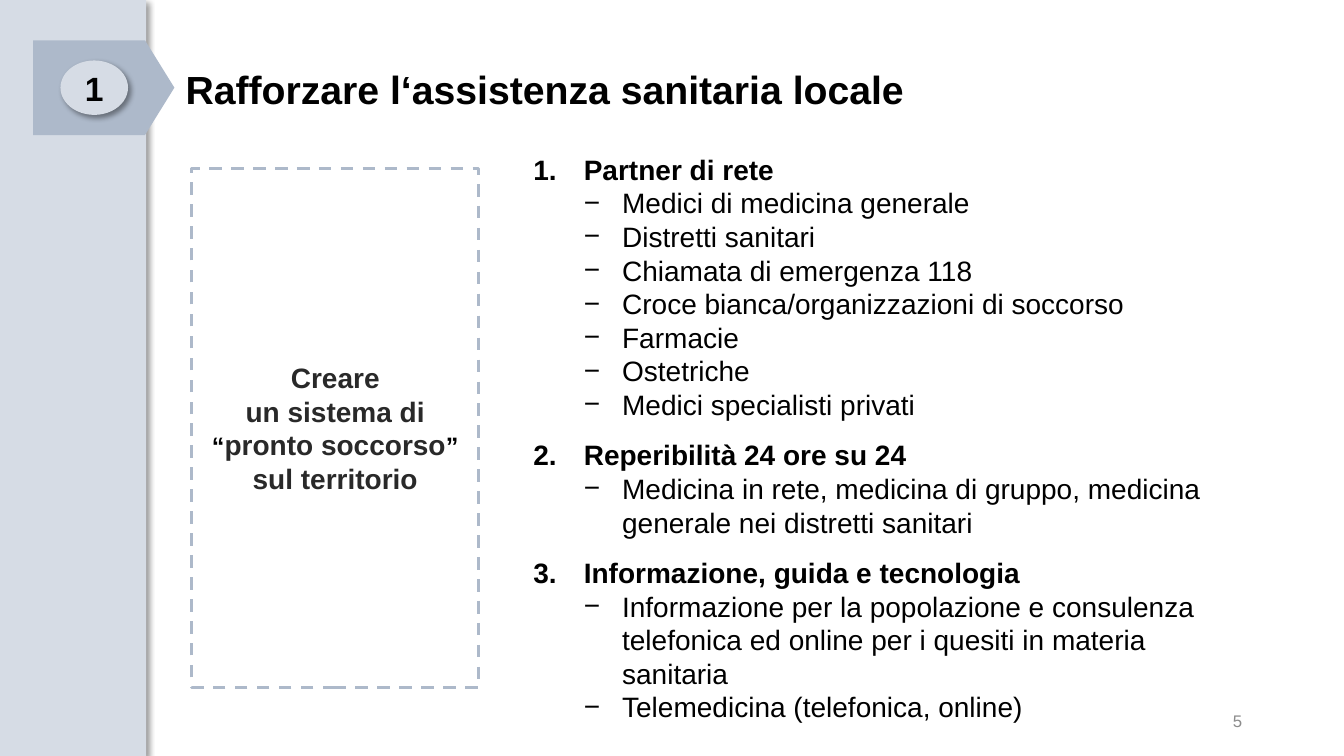
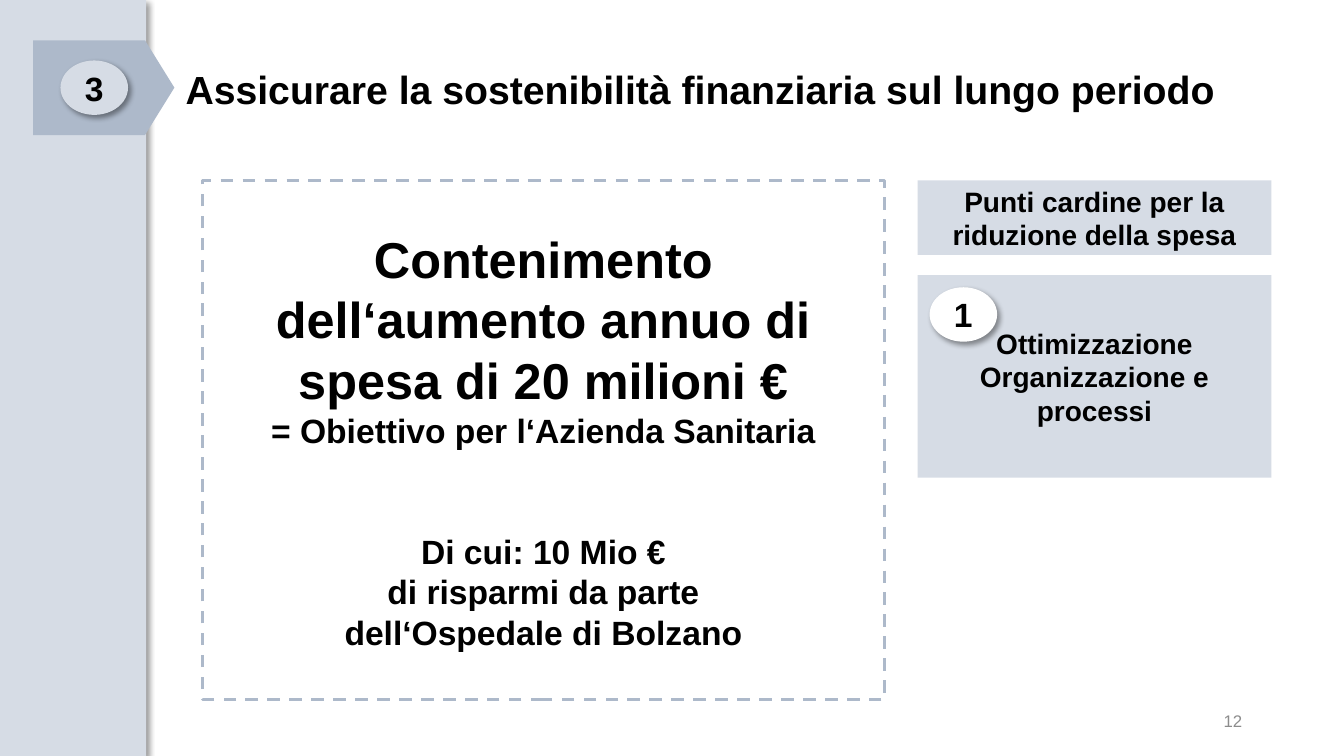
from dataclasses import dataclass

from lxml import etree
from pptx import Presentation
from pptx.dml.color import RGBColor
from pptx.enum.dml import MSO_LINE
from pptx.enum.shapes import MSO_SHAPE
from pptx.enum.text import MSO_ANCHOR, MSO_AUTO_SIZE, PP_ALIGN
from pptx.oxml import parse_xml
from pptx.oxml.ns import nsdecls, qn
from pptx.util import Pt

RECTANGLE = MSO_SHAPE.RECTANGLE
ELLIPSE = MSO_SHAPE.OVAL
PENTAGON = MSO_SHAPE.PENTAGON
LEFT, CENTER, RIGHT = PP_ALIGN.LEFT, PP_ALIGN.CENTER, PP_ALIGN.RIGHT
MIDDLE, TOP = MSO_ANCHOR.MIDDLE, MSO_ANCHOR.TOP
DASH = MSO_LINE.DASH
NO_FIT = MSO_AUTO_SIZE.NONE

EMU_PER_PX = 9144
SLIDE_WIDTH, SLIDE_HEIGHT = 1333, 750
TITLE_AND_BODY, TITLE_ONLY = 1, 5
LINE_RATIO = 1.2


@dataclass(frozen=True)
class Theme:
    font: str = "Arial"
    text: str = "000000"
    soft_text: str = "292929"
    muted: str = "8C8C8C"
    pale: str = "D6DCE5"
    steel: str = "ADB9CA"
    white: str = "FFFFFF"
    headline_size: int = 36
    title_size: int = 28
    large_size: int = 24
    body_size: int = 20
    quote_size: int = 18
    number_size: int = 12
    border: float = 2.25


def px(value):
    return value * EMU_PER_PX


class Deck:
    def __init__(self, theme):
        self.theme = theme
        self.presentation = Presentation()
        self.presentation.slide_width = px(SLIDE_WIDTH)
        self.presentation.slide_height = px(SLIDE_HEIGHT)
        self.slide = None

    def add_slide(self, layout, title, chapter, number):
        first = self.slide is None
        layouts = self.presentation.slide_layouts
        self.slide = self.presentation.slides.add_slide(layouts[layout])
        if first:
            self.side_band()
        self.title(title)
        self.chapter_mark(chapter)
        self.slide_number(number)

    def side_band(self):
        band = self.shape(RECTANGLE, 0, 0, 145, SLIDE_HEIGHT, fill=self.theme.pale, shadow=True)
        band.element.nvSpPr.cNvPr.id = 100
        self.presentation.slide_master.shapes.element.insert(2, band.element)

    def title(self, text):
        shape = self.slide.shapes.title
        self.place(shape, 174, 40, 1068, 103)
        frame = self.frame(shape, MIDDLE)
        self.fill_paragraph(frame.paragraphs[0], text, self.theme.title_size, bold=True, spacing=0.9)

    def chapter_mark(self, chapter):
        arrow = self.shape(PENTAGON, 33, 40, 140, 94, fill=self.theme.steel)
        arrow.adjustments[0] = 0.31
        self.badge(60, 60, chapter, self.theme.pale)

    def slide_number(self, number):
        box = self.slide.shapes.add_textbox(px(942), px(695), px(300), px(40))
        frame = self.frame(box, MIDDLE)
        self.fill_paragraph(frame.paragraphs[0], number, self.theme.number_size, self.theme.muted, RIGHT)

    def place(self, shape, left, top, width, height):
        shape.left, shape.top = px(left), px(top)
        shape.width, shape.height = px(width), px(height)

    def frame(self, shape, anchor):
        frame = shape.text_frame
        frame.word_wrap = True
        frame.auto_size = NO_FIT
        frame.vertical_anchor = anchor
        return frame

    def shape(self, kind, left, top, width, height, fill=None, border=None, shadow=False):
        shape = self.slide.shapes.add_shape(kind, px(left), px(top), px(width), px(height))
        shape.shadow.inherit = False
        if fill:
            shape.fill.solid()
            shape.fill.fore_color.rgb = RGBColor.from_string(fill)
        else:
            shape.fill.background()
        if border:
            shape.line.color.rgb = RGBColor.from_string(border)
            shape.line.width = Pt(self.theme.border)
            shape.line.dash_style = DASH
        else:
            shape.line.fill.background()
        if shadow:
            effects = shape.element.spPr.find(qn("a:effectLst"))
            effects.append(parse_xml(
                f'<a:outerShdw {nsdecls("a")} blurRad="50800" dist="38100" dir="2700000" '
                'algn="tl" rotWithShape="0"><a:srgbClr val="000000">'
                '<a:alpha val="40000"/></a:srgbClr></a:outerShdw>'))
        return shape

    def badge(self, left, top, text, fill):
        ellipse = self.shape(ELLIPSE, left, top, 67, 54, fill=fill, shadow=True)
        self.lines(ellipse, [(text, self.theme.large_size, 0)])

    def panel(self, left, top, width, height, lines, color=None, **style):
        panel = self.shape(RECTANGLE, left, top, width, height, **style)
        self.lines(panel, lines, color)

    def lines(self, shape, lines, color=None):
        frame = self.frame(shape, MIDDLE)
        for index, (text, size, before) in enumerate(lines):
            paragraph = frame.add_paragraph() if index else frame.paragraphs[0]
            self.fill_paragraph(paragraph, text, size, color, CENTER, True, before)

    def fill_paragraph(self, paragraph, text, size, color=None, align=LEFT, bold=False,
                       before=0, spacing=None):
        paragraph.alignment = align
        paragraph.line_spacing = spacing or Pt(size * LINE_RATIO)
        paragraph.space_before = Pt(before)
        paragraph.space_after = Pt(0)
        if isinstance(text, str):
            paragraph.text = text
            self.style(paragraph.font, size, color, bold)
        else:
            for run_text, run_size, run_color in text:
                run = paragraph.add_run()
                run.text = run_text
                self.style(run.font, run_size, run_color, bold)

    def style(self, font, size, color, bold):
        font.name = self.theme.font
        font.size = Pt(size)
        font.bold = bold
        font.color.rgb = RGBColor.from_string(color or self.theme.text)

    def bullet(self, paragraph, level):
        paragraph.level = level
        properties = paragraph._p.get_or_add_pPr()
        margin, hanging = ((50, 50), (88, 38))[level]
        properties.set("marL", str(px(margin)))
        properties.set("indent", str(px(-hanging)))
        etree.SubElement(properties, qn("a:buFont")).set("typeface", self.theme.font)
        if level:
            etree.SubElement(properties, qn("a:buChar")).set("char", "−")
        else:
            etree.SubElement(properties, qn("a:buAutoNum")).set("type", "arabicPeriod")

    def numbered_list(self, left, top, width, height, groups):
        body = self.slide.placeholders[1]
        self.place(body, left, top, width, height)
        frame = self.frame(body, TOP)
        paragraph = frame.paragraphs[0]
        for index, (heading, items) in enumerate(groups):
            for level, text in [(0, heading)] + [(1, item) for item in items]:
                if index or level:
                    paragraph = frame.add_paragraph()
                self.bullet(paragraph, level)
                before = 12 if index and not level else 0
                self.fill_paragraph(paragraph, text, self.theme.body_size, bold=not level, before=before)


def local_care(deck):
    theme = deck.theme
    deck.add_slide(TITLE_AND_BODY, "Rafforzare l‘assistenza sanitaria locale", "1", "5")
    quoted = [
        ("“", theme.quote_size, theme.text),
        ("pronto soccorso", theme.body_size, theme.soft_text),
        ("”", theme.quote_size, theme.text),
    ]
    goal = ["Creare", "un sistema di", quoted, "sul territorio"]
    deck.panel(190, 167, 285, 515, [(line, theme.body_size, 0) for line in goal],
               theme.soft_text, border=theme.steel)
    deck.numbered_list(519, 146, 722, 600, [
        ("Partner di rete", [
            "Medici di medicina generale",
            "Distretti sanitari",
            "Chiamata di emergenza 118",
            "Croce bianca/organizzazioni di soccorso",
            "Farmacie",
            "Ostetriche",
            "Medici specialisti privati",
        ]),
        ("Reperibilità 24 ore su 24", [
            "Medicina in rete, medicina di gruppo, medicina generale nei distretti sanitari",
        ]),
        ("Informazione, guida e tecnologia", [
            "Informazione per la popolazione e consulenza telefonica ed online "
            "per i quesiti in materia sanitaria",
            "Telemedicina (telefonica, online)",
        ]),
    ])


def financial_sustainability(deck):
    theme = deck.theme
    deck.add_slide(TITLE_ONLY, "Assicurare la sostenibilità finanziaria sul lungo periodo", "3", "12")
    deck.panel(201, 179, 676, 515, [
        ("Contenimento\ndell‘aumento annuo di spesa di 20 milioni €", theme.headline_size, 0),
        ("= Obiettivo per l‘Azienda Sanitaria", theme.large_size, 0),
        ("Di cui: 10 Mio €", theme.large_size, 58),
        ("di risparmi da parte", theme.large_size, 0),
        ("dell‘Ospedale di Bolzano", theme.large_size, 0),
    ], border=theme.steel)
    for top, height, text in (
        (179, 74, "Punti cardine per la riduzione della spesa"),
        (273, 201, "Ottimizzazione Organizzazione e processi"),
    ):
        deck.panel(910, top, 351, height, [(text, theme.body_size, 0)], fill=theme.pale)
    deck.badge(922, 285, "1", theme.white)


def main():
    deck = Deck(Theme())
    local_care(deck)
    financial_sustainability(deck)
    deck.presentation.save("out.pptx")


if __name__ == "__main__":
    main()
